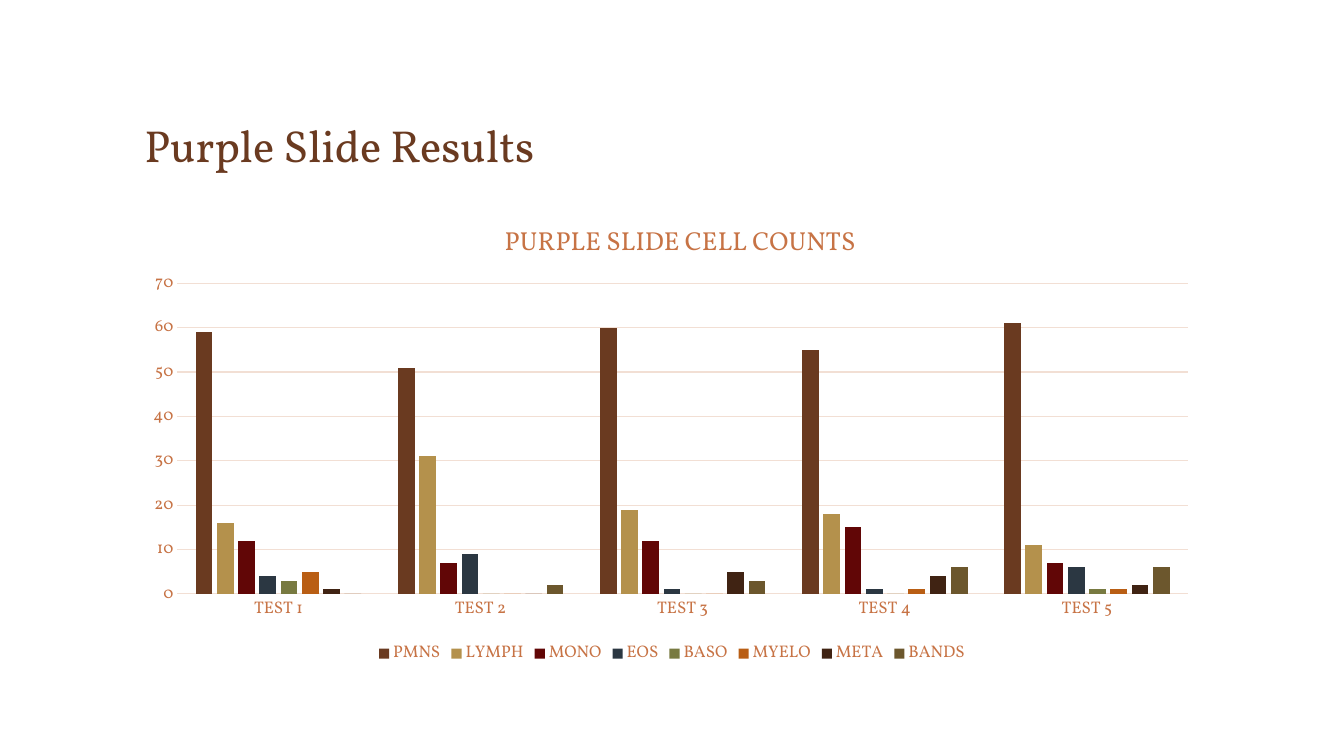
from dataclasses import dataclass

from lxml.etree import SubElement
from pptx import Presentation
from pptx.chart.data import CategoryChartData
from pptx.dml.color import RGBColor
from pptx.enum.chart import XL_CHART_TYPE, XL_LEGEND_POSITION, XL_TICK_MARK
from pptx.enum.text import MSO_ANCHOR
from pptx.oxml.ns import qn
from pptx.util import Inches, Pt

FONT = "Vollkorn"
COLORS = {
    "brown": "6A3A20", "copper": "C77345", "grid": "F2DFD4", "tan": "B4914C",
    "wine": "610606", "navy": "2B3742", "olive": "787A41", "orange": "B95E14",
    "coffee": "402313", "khaki": "6C572D",
}
TESTS = [f"TEST {n}" for n in range(1, 6)]


@dataclass
class Box:
    left: float
    top: float
    width: float
    height: float

    def on(self, prs) -> tuple:
        w, h = prs.slide_width, prs.slide_height
        sizes = (self.left * w, self.top * h, self.width * w, self.height * h)
        return tuple(int(v / 100) for v in sizes)


@dataclass
class Cell:
    name: str
    counts: tuple
    color: str


TITLE = Box(10, 6.27, 80, 17.07)
CHART = Box(10, 26.27, 80, 62.27)
CELLS = [
    Cell("PMNS", (59, 51, 60, 55, 61), "brown"),
    Cell("LYMPH", (16, 31, 19, 18, 11), "tan"),
    Cell("MONO", (12, 7, 12, 15, 7), "wine"),
    Cell("EOS", (4, 9, 1, 1, 6), "navy"),
    Cell("BASO", (3, 0, 0, 0, 1), "olive"),
    Cell("MYELO", (5, 0, 0, 1, 1), "orange"),
    Cell("META", (1, 0, 5, 4, 2), "coffee"),
    Cell("BANDS", (0, 2, 3, 6, 6), "khaki"),
]


def rgb(name: str) -> RGBColor:
    return RGBColor.from_string(COLORS[name])


def set_font(font, size: float, color: str) -> None:
    font.name, font.size, font.bold = FONT, Pt(size), False
    font.color.rgb = rgb(color)


def write(tf, text: str, *, size: float, color: str) -> None:
    r = tf.paragraphs[0].add_run()
    r.text = text
    set_font(r.font, size, color)


def set_line(line) -> None:
    line.color.rgb = rgb("grid")
    line.width = Pt(0.75)


def place(part, index: int, **shares: float) -> None:
    layout = part.find(qn("c:layout"))
    if layout is None:
        layout = SubElement(part, qn("c:layout"))
        part.insert(index, layout)
    manual = SubElement(layout, qn("c:manualLayout"))
    if "w" in shares:
        SubElement(manual, qn("c:layoutTarget")).set("val", "inner")
    for key in ("x", "y"):
        SubElement(manual, qn(f"c:{key}Mode")).set("val", "edge")
    for key, value in shares.items():
        SubElement(manual, qn(f"c:{key}")).set("val", str(value))


def add_title(prs, s) -> None:
    tf = s.shapes.add_textbox(*TITLE.on(prs)).text_frame
    tf.word_wrap = True
    tf.vertical_anchor = MSO_ANCHOR.BOTTOM
    write(tf, "Purple Slide Results", size=32, color="brown")


def style_axes(chart) -> None:
    for axis in (chart.category_axis, chart.value_axis):
        axis.major_tick_mark = axis.minor_tick_mark = XL_TICK_MARK.NONE
        set_font(axis.tick_labels.font, 12, "copper")
    set_line(chart.category_axis.format.line)
    values = chart.value_axis
    values.minimum_scale, values.maximum_scale, values.major_unit = 0, 70, 10
    values.format.line.fill.background()
    set_line(values.major_gridlines.format.line)


def add_counts(prs, s) -> None:
    data = CategoryChartData()
    data.categories = TESTS
    for cell in CELLS:
        data.add_series(cell.name, cell.counts)
    chart = s.shapes.add_chart(
        XL_CHART_TYPE.COLUMN_CLUSTERED, *CHART.on(prs), data).chart
    set_font(chart.font, 10, "brown")
    write(chart.chart_title.text_frame, "PURPLE SLIDE CELL COUNTS",
          size=18.6, color="copper")
    style_axes(chart)
    chart.has_legend = True
    chart.legend.position = XL_LEGEND_POSITION.BOTTOM
    chart.legend.include_in_layout = False
    set_font(chart.legend.font, 12, "copper")
    plot = chart.plots[0]
    plot.gap_width, plot.overlap, plot.vary_by_categories = 219, -27, False
    for series, cell in zip(plot.series, CELLS):
        series.format.fill.solid()
        series.format.fill.fore_color.rgb = rgb(cell.color)
    root = chart.element if hasattr(chart, "element") else chart._chartSpace
    place(root.find(".//" + qn("c:title")), 1, x=0.34, y=0.04)
    place(root.find(".//" + qn("c:plotArea")), 0, x=0.04, y=0.18, w=0.94, h=0.66)


def main() -> None:
    prs = Presentation()
    prs.slide_width, prs.slide_height = Inches(13.33), Inches(7.5)
    s = prs.slides.add_slide(prs.slide_layouts[6])
    add_title(prs, s)
    add_counts(prs, s)
    prs.save("out.pptx")


if __name__ == "__main__":
    main()
